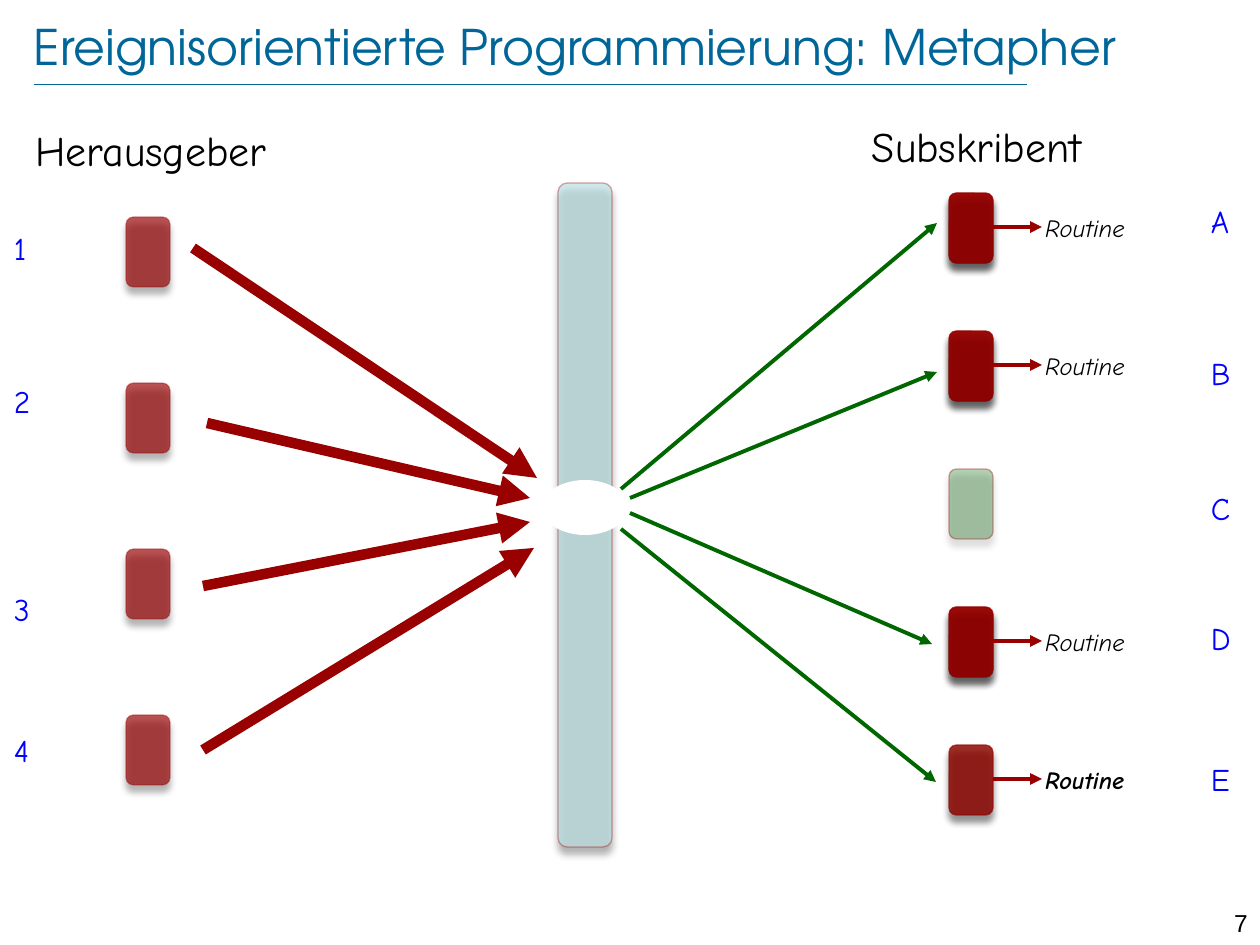
from dataclasses import dataclass

from lxml import etree
from pptx import Presentation
from pptx.dml.color import RGBColor
from pptx.enum.shapes import MSO_CONNECTOR, MSO_SHAPE
from pptx.enum.text import MSO_ANCHOR, PP_ALIGN
from pptx.oxml.ns import qn
from pptx.util import Inches, Pt

ROUNDED = MSO_SHAPE.ROUNDED_RECTANGLE
OVAL = MSO_SHAPE.OVAL
STRAIGHT = MSO_CONNECTOR.STRAIGHT
LEFT, RIGHT = PP_ALIGN.LEFT, PP_ALIGN.RIGHT
MIDDLE = MSO_ANCHOR.MIDDLE
PX_PER_INCH = 126
CARD_W, CARD_H = 44, 70


@dataclass(frozen=True)
class Theme:
    title_font: str = "TeX Gyre Adventor"
    body_font: str = "Comic Neue"
    number_font: str = "Arial"
    title: str = "006699"
    text: str = "000000"
    label: str = "0000FF"
    red: str = "990000"
    green: str = "006600"
    channel: str = "BBE0E3"
    white: str = "FFFFFF"
    title_size: int = 28
    heading_size: int = 24
    label_size: int = 18
    small_size: int = 14


THEME = Theme()


def px(n):
    return Inches(n / PX_PER_INCH)


def set_alpha(color_format, percent):
    for clr in color_format._xFill.iter(qn("a:srgbClr")):
        etree.SubElement(clr, qn("a:alpha"), val=str(percent * 1000))


def add_shadow(sp):
    effects = sp._element.spPr.find(qn("a:effectLst"))
    shadow = etree.SubElement(effects, qn("a:outerShdw"), blurRad=str(Pt(4)),
                              dist=str(Pt(4)), dir="5400000", rotWithShape="0")
    clr = etree.SubElement(shadow, qn("a:srgbClr"), val=THEME.text)
    etree.SubElement(clr, qn("a:alpha"), val="43000")


def add_card(s, x, y, w, h, color, opacity):
    sp = s.shapes.add_shape(ROUNDED, px(x), px(y), px(w), px(h))
    sp.shadow.inherit = False
    sp.fill.solid()
    sp.fill.fore_color.rgb = RGBColor.from_string(color)
    sp.line.width = Pt(0.75)
    sp.line.color.rgb = RGBColor.from_string(THEME.red)
    set_alpha(sp.fill.fore_color, opacity)
    set_alpha(sp.line.color, 34)
    add_shadow(sp)


def add_line(s, start, end, color, width, arrow=True):
    c = s.shapes.add_connector(STRAIGHT, *(px(n) for n in (*start, *end)))
    c.line.color.rgb = RGBColor.from_string(color)
    c.line.width = Pt(width)
    if arrow:
        etree.SubElement(c.line._get_or_add_ln(), qn("a:tailEnd"), type="triangle")
    etree.SubElement(c._element.spPr, qn("a:effectLst"))


def format_text(tf, text, font, size, color, align=LEFT, bold=False, italic=False):
    tf.text = text
    tf.word_wrap = True
    p = tf.paragraphs[0]
    p.alignment = align
    f = p.runs[0].font
    f.name, f.size, f.bold, f.italic = font, Pt(size), bold, italic
    f.color.rgb = RGBColor.from_string(color)


def clear_margins(tf):
    tf.margin_left = tf.margin_right = tf.margin_top = tf.margin_bottom = 0


def add_text(s, x, y, w, h, text, size, color=THEME.text, **style):
    tf = s.shapes.add_textbox(px(x), px(y), px(w), px(h)).text_frame
    clear_margins(tf)
    format_text(tf, text, THEME.body_font, size, color, **style)


def add_title(s, x, y, w, h):
    sp = s.shapes.title
    sp.left, sp.top, sp.width, sp.height = px(x), px(y), px(w), px(h)
    tf = sp.text_frame
    clear_margins(tf)
    format_text(tf, "Ereignisorientierte Programmierung: Metapher",
                THEME.title_font, THEME.title_size, THEME.title)
    tf.vertical_anchor = MIDDLE
    add_line(s, (x, y + 68), (x + 993, y + 68), THEME.title, 0.25, arrow=False)


def add_page_number(s, x, y, w, h):
    tf = s.shapes.add_textbox(px(x), px(y), px(w), px(h)).text_frame
    format_text(tf, "7", THEME.number_font, THEME.small_size, THEME.text, align=RIGHT)


def add_channel(s, x, y, w, h):
    add_card(s, x, y, w, h, THEME.channel, 68)
    hole = s.shapes.add_shape(OVAL, px(x - 16), px(y + 297), px(86), px(55))
    hole.shadow.inherit = False
    hole.fill.solid()
    hole.fill.fore_color.rgb = RGBColor.from_string(THEME.white)
    hole.line.fill.background()


def add_publishers(s, x, y):
    add_text(s, x + 21, y, 369, 50, "Herausgeber", THEME.heading_size)
    rows = [
        ("1", 104, (179, 123), (523, 353)),
        ("2", 257, (193, 298), (516, 373)),
        ("3", 465, (189, 461), (516, 397)),
        ("4", 606, (189, 625), (520, 423)),
    ]
    for i, (label, label_y, start, end) in enumerate(rows):
        add_card(s, x + 112, y + 92 + 166 * i, CARD_W, CARD_H, THEME.red, 67)
        add_line(s, (x + start[0], y + start[1]), (x + end[0], y + end[1]), THEME.red, 6)
        add_text(s, x, y + label_y, 28, 38, label, THEME.label_size, THEME.label)


def add_subscribers(s, x, y):
    add_text(s, x + 251, y, 265, 50, "Subskribent", THEME.heading_size)
    rows = [
        ("A", 81, 2, (0, 368), (316, 102)),
        ("B", 233, 2, (9, 377), (316, 251)),
        ("C", 368, 0, None, None),
        ("D", 498, 2, (9, 392), (311, 523)),
        ("E", 639, 1, (0, 408), (315, 661)),
    ]
    for i, (label, label_y, activations, start, end) in enumerate(rows):
        card_x, card_y = x + 328, y + 72 + 138 * i
        add_card(s, card_x, card_y, CARD_W, CARD_H, THEME.green, 29)
        for _ in range(activations):
            add_card(s, card_x, card_y, CARD_W, CARD_H, THEME.red, 77)
        if activations:
            add_line(s, (x + start[0], y + start[1]), (x + end[0], y + end[1]),
                     THEME.green, 2.25)
            arrow_y = card_y + 34
            add_line(s, (card_x + CARD_W, arrow_y), (card_x + 93, arrow_y), THEME.red, 2.25)
            add_text(s, card_x + 96, card_y + 20, 107, 29, "Routine", THEME.small_size,
                     italic=True, bold=label == "E")
        add_text(s, x + 590, y + label_y, 28, 38, label, THEME.label_size, THEME.label)


def main():
    prs = Presentation()
    prs.slide_width, prs.slide_height = px(1260), px(945)
    s = prs.slides.add_slide(prs.slide_layouts[5])
    add_title(s, 34, 16, 1142, 60)
    add_page_number(s, 1191, 902, 69, 30)
    add_channel(s, 558, 183, 54, 664)
    add_publishers(s, 14, 125)
    add_subscribers(s, 621, 121)
    prs.save("out.pptx")


if __name__ == "__main__":
    main()
